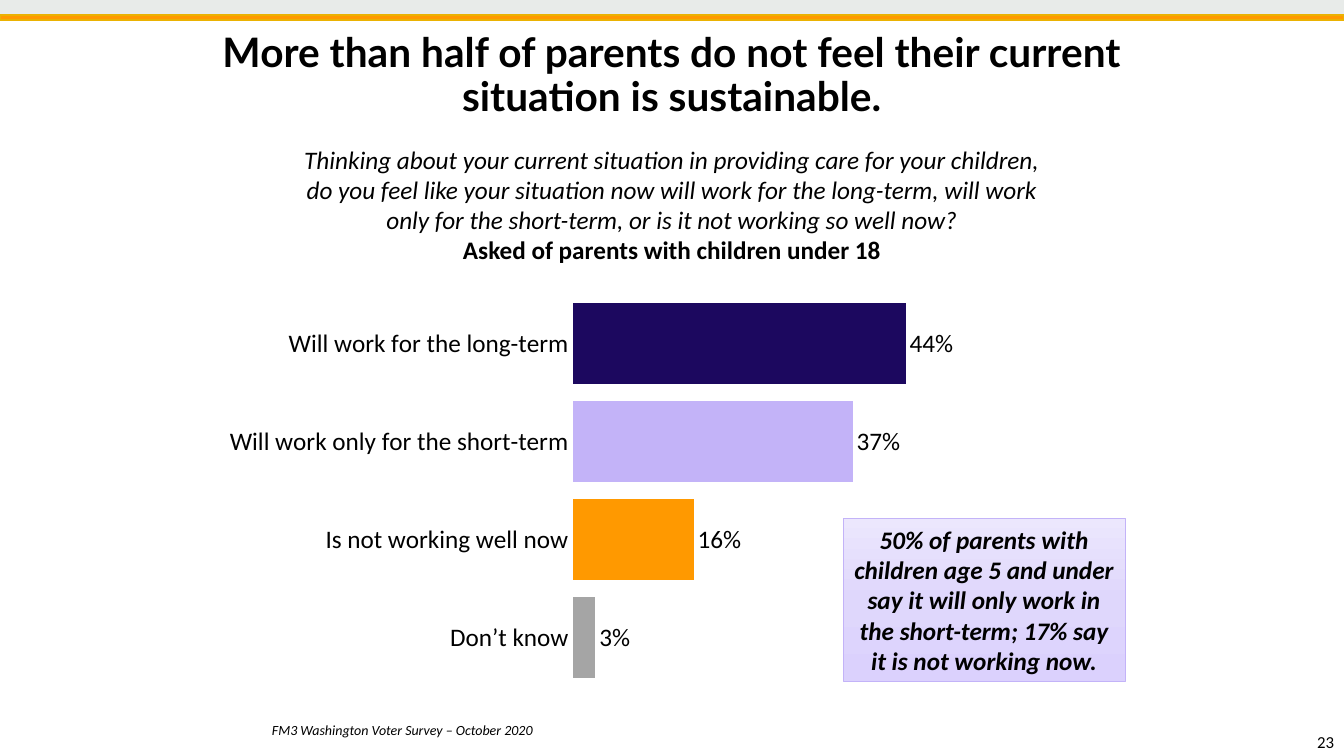
from dataclasses import dataclass

from lxml.etree import SubElement
from copy import deepcopy
from pptx import Presentation
from pptx.chart.data import CategoryChartData
from pptx.dml.color import RGBColor
from pptx.enum.chart import XL_CHART_TYPE as ChartType
from pptx.enum.chart import XL_LABEL_POSITION as LabelPosition
from pptx.enum.chart import XL_TICK_MARK as TickMark
from pptx.enum.shapes import MSO_SHAPE as Preset
from pptx.enum.text import MSO_ANCHOR as Anchor
from pptx.enum.text import MSO_AUTO_SIZE as AutoSize
from pptx.enum.text import PP_ALIGN as Align
from pptx.oxml.ns import qn
from pptx.util import Inches, Pt


@dataclass(frozen=True)
class Theme:
    black: str = "000000"
    band: str = "E8EBE9"
    orange: str = "FF9900"
    gold: str = "EBB201"
    navy: str = "1C085F"
    lilac: str = "C3B3F8"
    grey: str = "A5A5A5"
    callout: tuple = ("ECE7FD", "DFD7FC", "DBD1FD")
    heading_font: str = "Lato"
    body_font: str = "Calibri"
    heading: int = 29
    body: int = 18
    number: int = 12
    note: int = 10


def color(value):
    return RGBColor.from_string(value)


def style_font(font, name, size, tint, bold=False, italic=False):
    font.name, font.size = name, Pt(size)
    font.bold, font.italic = bold, italic
    font.color.rgb = color(tint)


def write(para, text, *, align=Align.LEFT, spacing=1.0, **font):
    para.alignment, para.line_spacing = align, spacing
    span = para.add_run()
    span.text = text
    style_font(span.font, **font)


class SlideBuilder:
    """Places elements by left, top, width and height in percent of the slide."""

    def __init__(self, deck, theme):
        self.deck, self.theme = deck, theme
        self.page = deck.slides.add_slide(deck.slide_layouts[5])

    def area(self, left, top, width, height):
        across, down = self.deck.slide_width / 100, self.deck.slide_height / 100
        return [round(share * unit) for share, unit in
                zip((left, top, width, height), (across, down) * 2)]

    def body_font(self, size=None, **extra):
        theme = self.theme
        return dict(name=theme.body_font, size=size or theme.body, tint=theme.black, **extra)

    def fill_frame(self, frame, lines, anchor=Anchor.TOP):
        """Write one paragraph for each (text, format) pair."""
        frame.word_wrap, frame.auto_size = True, AutoSize.NONE
        frame.vertical_anchor = anchor
        for index, (text, look) in enumerate(lines):
            para = frame.add_paragraph() if index else frame.paragraphs[0]
            write(para, text, **look)

    def title(self, text, place):
        theme, box = self.theme, self.page.shapes.title
        box.left, box.top, box.width, box.height = self.area(*place)
        look = dict(name=theme.heading_font, size=theme.heading, tint=theme.black,
                    bold=True, align=Align.CENTER, spacing=0.9)
        self.fill_frame(box.text_frame, [(text, look)])

    def text(self, lines, place, anchor=Anchor.TOP):
        box = self.page.shapes.add_textbox(*self.area(*place))
        self.fill_frame(box.text_frame, lines, anchor)

    def rectangle(self, place, fill=None, line=None, weight=1):
        shape = self.page.shapes.add_shape(Preset.RECTANGLE, *self.area(*place))
        shape.shadow.inherit = False
        if fill:
            shape.fill.solid()
            shape.fill.fore_color.rgb = color(fill)
        if line:
            shape.line.color.rgb = color(line)
            shape.line.width = Pt(weight)
        else:
            shape.line.fill.background()
        return shape

    def callout(self, text, place):
        shape = self.rectangle(place, line=self.theme.lilac, weight=0.5)
        shape.fill.gradient()
        shape.fill.gradient_angle = 270
        stops = shape._element.xpath(".//a:gsLst")[0]
        stops.insert(1, deepcopy(stops[0]))
        for stop, tint, position in zip(shape.fill.gradient_stops, self.theme.callout, (0, 0.5, 1)):
            stop.color.rgb, stop.position = color(tint), position
        look = self.body_font(bold=True, italic=True, align=Align.CENTER)
        self.fill_frame(shape.text_frame, [(text, look)], Anchor.MIDDLE)

    def bar_chart(self, answers, place, plot):
        """Draw horizontal bars from (label, share, colour) rows."""
        data = CategoryChartData(number_format="0%")
        data.categories = [label for label, _, _ in answers]
        data.add_series("Series 1", [share for _, share, _ in answers])
        frame = self.page.shapes.add_chart(ChartType.BAR_CLUSTERED, *self.area(*place), data)
        chart = frame.chart
        chart.has_legend = chart.has_title = False
        style_font(chart.font, **self.body_font(self.theme.note))

        labels_axis, values_axis = chart.category_axis, chart.value_axis
        labels_axis.reverse_order = True
        labels_axis.major_tick_mark = TickMark.NONE
        labels_axis.format.line.fill.background()
        style_font(labels_axis.tick_labels.font, **self.body_font())
        values_axis.minimum_scale, values_axis.maximum_scale = 0, 0.6
        values_axis.major_unit = 0.15
        values_axis.has_major_gridlines = values_axis.visible = False

        bars = chart.plots[0]
        bars.gap_width, bars.vary_by_categories = 21, False
        series = bars.series[0]
        series.format.fill.solid()
        series.format.fill.fore_color.rgb = color(answers[0][2])
        for index, (_, _, tint) in enumerate(answers[1:], 1):
            point_fill = series.points[index].format.fill
            point_fill.solid()
            point_fill.fore_color.rgb = color(tint)
        labels = series.data_labels
        labels.show_value = True
        labels.number_format, labels.number_format_is_linked = "0%", False
        labels.position = LabelPosition.OUTSIDE_END
        style_font(labels.font, **self.body_font())
        self.fix_plot(chart, plot)

    def fix_plot(self, chart, plot):
        """Set the inner plot area in shares of the chart."""
        area = chart._chartSpace.find(".//" + qn("c:plotArea"))
        for old in area.findall(qn("c:layout")):
            area.remove(old)
        layout = SubElement(area, qn("c:layout"))
        area.insert(0, layout)
        manual = SubElement(layout, qn("c:manualLayout"))
        settings = dict(layoutTarget="inner", xMode="edge", yMode="edge",
                        **dict(zip("xywh", plot)))
        for tag, value in settings.items():
            SubElement(manual, qn("c:" + tag)).set("val", str(value))


def main():
    deck = Presentation()
    deck.slide_width, deck.slide_height = Inches(13.33), Inches(7.5)
    theme = Theme()
    slide = SlideBuilder(deck, theme)

    slide.rectangle((0, 0, 100, 2.67), theme.band)
    slide.rectangle((0, 2, 100, 0.67), theme.orange, theme.gold)
    slide.text([("23", slide.body_font(theme.number, align=Align.RIGHT))],
               (85.22, 96.13, 14.78, 4))
    slide.bar_chart(
        [("Will work for the long-term", 0.44, theme.navy),
         ("Will work only for the short-term", 0.37, theme.lilac),
         ("Is not working well now", 0.16, theme.orange),
         ("Don’t know", 0.03, theme.grey)],
        (12.53, 37.33, 67.59, 55.73), plot=(0.445, 0.03, 0.5, 0.93))
    slide.title("More than half of parents do not feel their current situation is sustainable.",
                (13.58, 3.6, 72.84, 16.67))
    slide.text([("FM3 Washington Voter Survey – October 2020",
                 slide.body_font(theme.note, italic=True, spacing=0.9))],
               (19.5, 90.4, 66.47, 8), Anchor.BOTTOM)
    slide.text(
        [("Thinking about your current situation in providing care for your children, "
          "do you feel like your situation now will work for the long-term, will work "
          "only for the short-term, or is it not working so well now?",
          slide.body_font(italic=True, align=Align.CENTER)),
         ("Asked of parents with children under 18",
          slide.body_font(bold=True, align=Align.CENTER))],
        (21.3, 18.4, 57.39, 21.6))
    slide.callout("50% of parents with children age 5 and under say it will only work in "
                  "the short-term; 17% say it is not working now.",
                  (62.72, 68.53, 21, 21.6))
    deck.save("out.pptx")


if __name__ == "__main__":
    main()
